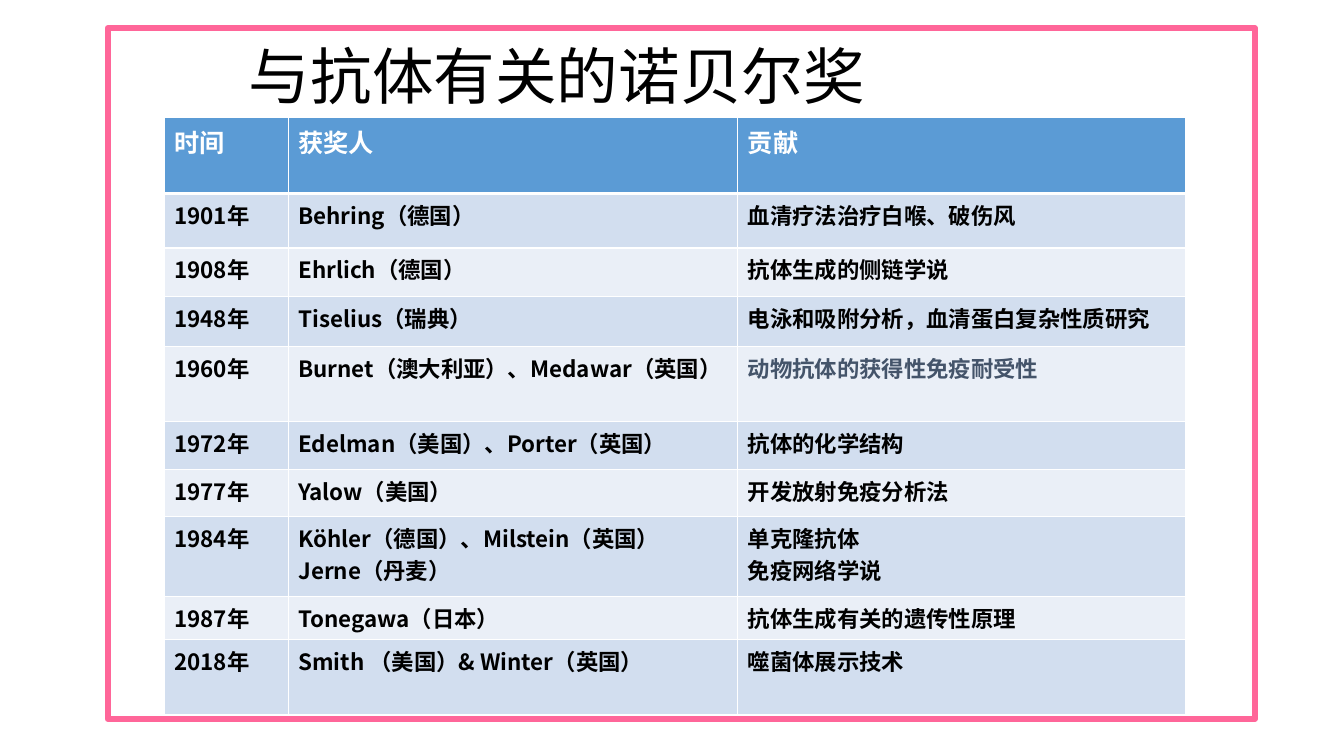
from dataclasses import dataclass
from typing import Any, NamedTuple

from lxml import etree
from pptx import Presentation
from pptx.dml.color import RGBColor
from pptx.enum import shapes, text
from pptx.oxml.ns import qn
from pptx.util import Pt


@dataclass(frozen=True)
class Theme:
    font: str = "Noto Sans CJK SC"
    alternate_font: str = "Arial"
    black: str = "000000"
    white: str = "FFFFFF"
    slate: str = "44546A"
    frame: str = "FF6699"
    header: str = "5B9BD5"
    bands: tuple[str, str] = ("D2DEEF", "EAEFF7")
    title_size: float = 44
    header_size: float = 18
    body_size: float = 16
    frame_width: float = 4.5
    border_width: float = 1
    header_border_width: float = 3


class Box(NamedTuple):
    left: float
    top: float
    width: float
    height: float


class Prize(NamedTuple):
    year: str
    winners: str
    contribution: str
    height: float
    highlighted: bool = False


THEME = Theme()
SLIDE_SIZE = (960, 540)
FRAME_BOX = Box(77, 20.2, 819.4, 493.2)
TITLE_BOX = Box(170.6, 11.5, 612, 90)
TABLE_BOX = Box(117.4, 84.2, 729.4, 407.5)
COLUMN_WIDTHS = (88.6, 321.1, 319.7)
HEADINGS = ("时间", "获奖人", "贡献")
HEADING_HEIGHT = 54
PRIZES = (
    Prize("1901年", "Behring（德国）", "血清疗法治疗白喉、破伤风", 38.9),
    Prize("1908年", "Ehrlich（德国）", "抗体生成的侧链学说", 34.6),
    Prize("1948年", "Tiselius（瑞典）", "电泳和吸附分析，血清蛋白复杂性质研究", 36),
    Prize("1960年", "Burnet（澳大利亚）、Medawar（英国）",
          "动物抗体的获得性免疫耐受性", 35.3, highlighted=True),
    Prize("1972年", "Edelman（美国）、Porter（英国）", "抗体的化学结构", 34.6),
    Prize("1977年", "Yalow（美国）", "开发放射免疫分析法", 33.1),
    Prize("1984年", "Köhler（德国）、Milstein（英国）\nJerne（丹麦）",
          "单克隆抗体\n免疫网络学说", 57.6),
    Prize("1987年", "Tonegawa（日本）", "抗体生成有关的遗传性原理", 30.2),
    Prize("2018年", "Smith （美国）& Winter（英国）", "噬菌体展示技术", 54),
)


def write(text_frame: Any, words: str, color: str, **font_format: Any) -> None:
    text_frame.text = words
    for paragraph in text_frame.paragraphs:
        for run in paragraph.runs:
            for name, value in font_format.items():
                setattr(run.font, name, value)
            run.font.color.rgb = RGBColor.from_string(color)


def place(shape: Any, box: Box) -> None:
    for name, value in box._asdict().items():
        setattr(shape, name, Pt(value))


def add_title(slide: Any) -> None:
    title = slide.shapes.title
    place(title, TITLE_BOX)
    write(title.text_frame, "与抗体有关的诺贝尔奖", THEME.black,
          name=THEME.font, size=Pt(THEME.title_size), bold=False)
    title.text_frame.vertical_anchor = text.MSO_ANCHOR.MIDDLE
    paragraph = title.text_frame.paragraphs[0]
    paragraph.alignment = text.PP_ALIGN.LEFT
    paragraph.line_spacing = 0.9


def add_frame(slide: Any) -> None:
    """Draw the pink outline behind the title."""
    frame = slide.shapes.add_shape(
        shapes.MSO_SHAPE.RECTANGLE, *map(Pt, FRAME_BOX))
    frame.shadow.inherit = False
    frame.fill.background()
    frame.line.color.rgb = RGBColor.from_string(THEME.frame)
    frame.line.width = Pt(THEME.frame_width)
    slide.shapes.title.element.addprevious(frame.element)


def fill_cell(cell: Any, words: str, fill: str, color: str, size: float,
              font: str = THEME.font) -> None:
    cell.fill.solid()
    cell.fill.fore_color.rgb = RGBColor.from_string(fill)
    write(cell.text_frame, words, color, name=font, size=Pt(size), bold=True)


def add_borders(table_element: Any) -> None:
    for row, row_element in enumerate(table_element.iter(qn("a:tr"))):
        heavy_side = {0: "lnB", 1: "lnT"}.get(row)
        for properties in row_element.iter(qn("a:tcPr")):
            for index, side in enumerate(("lnL", "lnR", "lnT", "lnB")):
                width = (THEME.header_border_width if side == heavy_side
                         else THEME.border_width)
                line = etree.Element(qn(f"a:{side}"), w=str(Pt(width)))
                fill = etree.SubElement(line, qn("a:solidFill"))
                etree.SubElement(fill, qn("a:srgbClr"), val=THEME.white)
                properties.insert(index, line)


def add_prize_table(slide: Any) -> None:
    graphic_frame = slide.shapes.add_table(
        len(PRIZES) + 1, len(HEADINGS), *map(Pt, TABLE_BOX))
    table = graphic_frame.table
    for column, width in zip(table.columns, COLUMN_WIDTHS):
        column.width = Pt(width)
    table.rows[0].height = Pt(HEADING_HEIGHT)
    for column, heading in enumerate(HEADINGS):
        fill_cell(table.cell(0, column), heading, THEME.header, THEME.white,
                  THEME.header_size)
    for row, prize in enumerate(PRIZES, start=1):
        table.rows[row].height = Pt(prize.height)
        band = THEME.bands[(row - 1) % 2]
        for column, words in enumerate(
                (prize.year, prize.winners, prize.contribution)):
            special = prize.highlighted and words == prize.contribution
            fill_cell(table.cell(row, column), words, band,
                      THEME.slate if special else THEME.black,
                      THEME.body_size,
                      THEME.alternate_font if special else THEME.font)
    add_borders(graphic_frame.element)


def set_east_asian_font(slide: Any) -> None:
    for properties in slide.element.iter(qn("a:rPr")):
        etree.SubElement(properties, qn("a:ea"), typeface=THEME.font)


def main() -> None:
    presentation = Presentation()
    presentation.slide_width, presentation.slide_height = map(Pt, SLIDE_SIZE)
    title_only = presentation.slide_layouts.get_by_name("Title Only")
    slide = presentation.slides.add_slide(title_only)
    add_title(slide)
    add_frame(slide)
    add_prize_table(slide)
    set_east_asian_font(slide)
    presentation.save("out.pptx")


if __name__ == "__main__":
    main()
